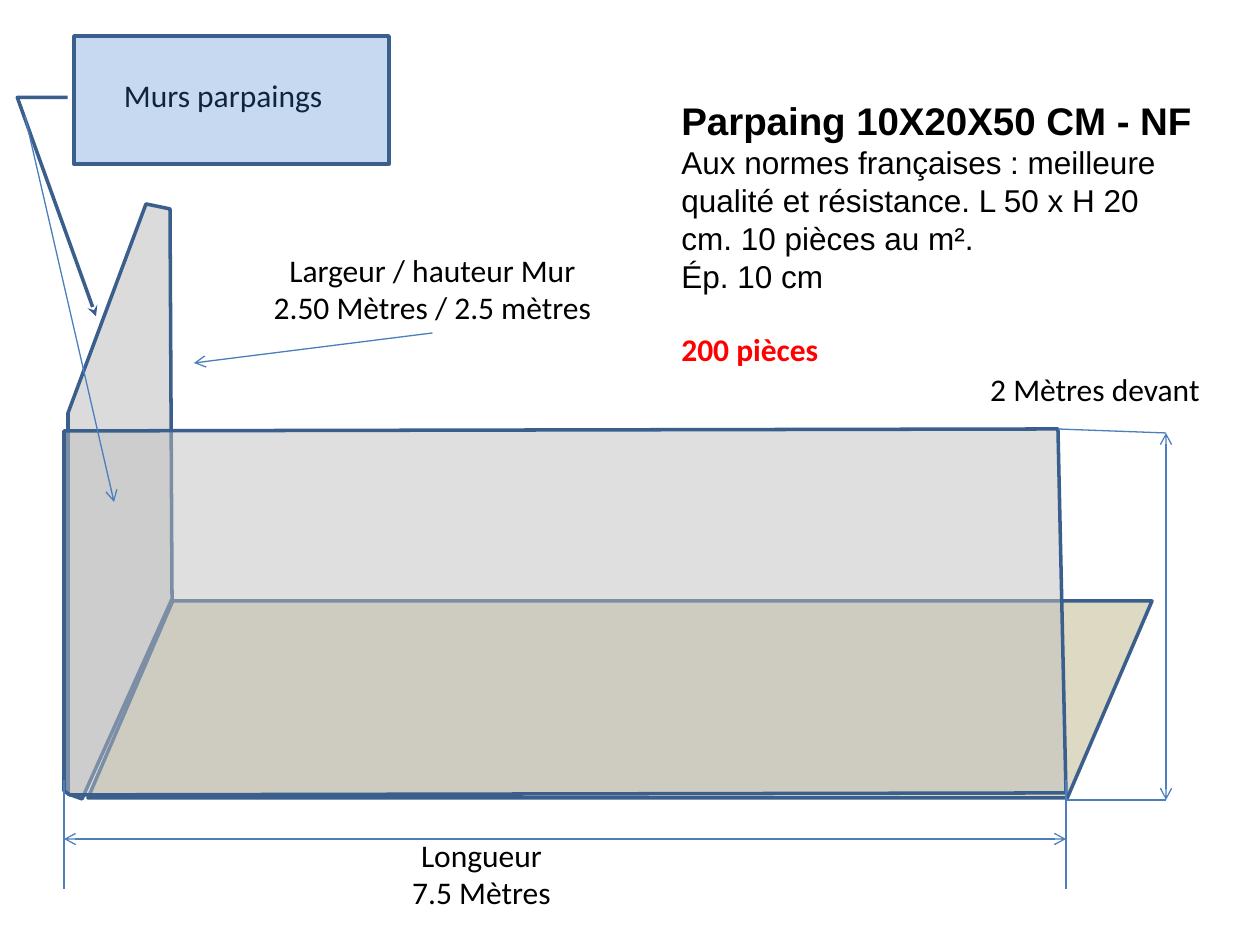
import dataclasses
from typing import Optional

import pptx
import pptx.dml.color
import pptx.enum.shapes
import pptx.enum.text
import pptx.oxml
import pptx.oxml.ns
import pptx.util

EMU_PER_PX = 914400 / 126
COLORS = {
    "outline": "3A5F8C",
    "dimension": "4B7EBC",
    "floor": "DDD9C3",
    "wall": "BFBFBF",
    "callout": "C6D9F1",
    "callout text": "0F243E",
    "text": "000000",
    "quantity": "FF0000",
}
ALIGN = pptx.enum.text.PP_ALIGN
ANCHOR = pptx.enum.text.MSO_ANCHOR
SHAPES = pptx.enum.shapes.MSO_SHAPE


@dataclasses.dataclass
class Wall:
    corners: list[tuple[int, int]]
    opacity: int


@dataclasses.dataclass
class Line:
    start: tuple[int, int]
    end: tuple[int, int]
    head: Optional[str] = None
    tail: Optional[str] = None


@dataclasses.dataclass
class Label:
    box: tuple[int, int, int, int]
    lines: list[str]
    color: str = "text"
    bold: bool = False
    align: ALIGN = ALIGN.CENTER
    anchor: ANCHOR = ANCHOR.MIDDLE


def px(length: int) -> pptx.util.Emu:
    return pptx.util.Emu(round(length * EMU_PER_PX))


def rgb(name: str) -> pptx.dml.color.RGBColor:
    return pptx.dml.color.RGBColor.from_string(COLORS[name])


def write(frame, text: str, *, size=18, font="Calibri", color="text",
          bold=False, align=ALIGN.CENTER) -> None:
    """Fill the first paragraph if it is free, otherwise add one."""
    first = frame.paragraphs[0]
    paragraph = frame.add_paragraph() if first.runs else first
    paragraph.alignment = align
    run = paragraph.add_run()
    run.text = text
    run.font.size = pptx.util.Pt(size)
    run.font.name = font
    run.font.bold = bold
    run.font.color.rgb = rgb(color)


def add_xml(parent, tag: str, **attributes: str) -> None:
    element = pptx.oxml.parse_xml(f"<a:{tag} {pptx.oxml.ns.nsdecls('a')}/>")
    for name, value in attributes.items():
        element.set(name, value)
    parent.append(element)


def paint(shape, fill: str, opacity: int = 100) -> None:
    shape.shadow.inherit = False
    shape.fill.solid()
    shape.fill.fore_color.rgb = rgb(fill)
    shape.line.color.rgb = rgb("outline")
    shape.line.width = pptx.util.Pt(2)
    if opacity < 100:
        solid_fill = shape._element.spPr.find(pptx.oxml.ns.qn("a:solidFill"))
        add_xml(solid_fill[0], "alpha", val=str(opacity * 1000))


def add_arrowheads(shape, head: Optional[str], tail: Optional[str]) -> None:
    outline = shape._element.spPr.find(pptx.oxml.ns.qn("a:ln"))
    for tag, kind in (("headEnd", head), ("tailEnd", tail)):
        if kind:
            add_xml(outline, tag, type=kind)


def draw_wall(shapes, wall: Wall) -> None:
    builder = shapes.build_freeform(*wall.corners[0], scale=EMU_PER_PX)
    builder.add_line_segments(wall.corners[1:], close=True)
    paint(builder.convert_to_shape(), "wall", wall.opacity)


def draw_line(shapes, line: Line):
    connector = shapes.add_connector(
        pptx.enum.shapes.MSO_CONNECTOR.STRAIGHT,
        *(px(value) for value in line.start + line.end))
    connector.line.color.rgb = rgb("dimension")
    connector.line.width = pptx.util.Pt(0.75)
    add_arrowheads(connector, line.head, line.tail)
    add_xml(connector._element.spPr, "effectLst")
    return connector


def add_text_box(shapes, box: tuple[int, int, int, int], *, wrap: bool, anchor: ANCHOR):
    text_box = shapes.add_textbox(*map(px, box))
    frame = text_box.text_frame
    frame.word_wrap = wrap
    frame.auto_size = pptx.enum.text.MSO_AUTO_SIZE.SHAPE_TO_FIT_TEXT
    frame.vertical_anchor = anchor
    return text_box


def draw_label(shapes, label: Label):
    text_box = add_text_box(shapes, label.box, wrap=False, anchor=label.anchor)
    for text in label.lines:
        write(text_box.text_frame, text, color=label.color, bold=label.bold, align=label.align)
    return text_box


SIDE_WALL = Wall([(68, 794), (68, 413), (146, 204), (170, 209), (172, 599), (82, 799)], 56)
FRONT_WALL = Wall([(70, 795), (1066, 793), (1058, 429), (64, 431), (64, 791)], 49)

LEFT, RIGHT, HEIGHT_X = 64, 1066, 1166
DIMENSIONS = [
    Line((25, 116), (114, 502), tail="arrow"),
    # Length
    Line((RIGHT, 839), (LEFT, 839), head="arrow", tail="arrow"),
    Line((LEFT, 889), (LEFT, 780)),
    Line((RIGHT, 889), (RIGHT, 780)),
    # Front height
    Line((1058, 429), (HEIGHT_X, 433)),
    Line((RIGHT, 800), (HEIGHT_X, 800)),
    Line((HEIGHT_X, 433), (HEIGHT_X, 800), head="arrow", tail="arrow"),
]
LABELS = [
    Label((394, 829, 175, 89), ["Longueur", "7.5 Mètres"]),
    Label((964, 363, 262, 51), ["2 Mètres devant"]),
    Label((669, 324, 186, 51), ["200 pièces"], color="quantity", bold=True,
          align=ALIGN.LEFT, anchor=ANCHOR.TOP),
]
WIDTH_LABEL = Label((243, 244, 379, 89), ["Largeur / hauteur Mur", "2.50 Mètres / 2.5 mètres"])


def main() -> None:
    presentation = pptx.Presentation()
    presentation.slide_width, presentation.slide_height = px(1260), px(945)
    shapes = presentation.slides.add_slide(presentation.slide_layouts[6]).shapes

    # Floor
    floor = shapes.add_shape(SHAPES.PARALLELOGRAM, *map(px, (88, 601, 1064, 197)))
    floor.adjustments[0] = 0.43
    paint(floor, "floor")

    # Callout pointing at the side wall
    callout = shapes.add_shape(SHAPES.LINE_CALLOUT_2, *map(px, (74, 36, 315, 128)))
    for index, value in enumerate((0.48, -0.02, 0.48, -0.18, 2.19, 0.07)):
        callout.adjustments[index] = value
    paint(callout, "callout")
    add_arrowheads(callout, None, "stealth")
    callout.text_frame.vertical_anchor = ANCHOR.MIDDLE
    callout.text_frame.margin_right = px(29)
    callout.text_frame.margin_bottom = px(16)
    write(callout.text_frame, "Murs parpaings", color="callout text")

    # Walls
    walls = shapes.add_group_shape()
    for wall in (SIDE_WALL, FRONT_WALL):
        draw_wall(walls.shapes, wall)

    # Dimensions and their labels
    for line in DIMENSIONS:
        draw_line(shapes, line)
    for label in LABELS:
        draw_label(shapes, label)
    width_label = draw_label(shapes, WIDTH_LABEL)
    width_arrow = draw_line(shapes, Line((432, 333), (194, 363), tail="arrow"))
    width_arrow.begin_connect(width_label, 2)

    # Block description
    description = add_text_box(shapes, (669, 90, 541, 212), wrap=True,
                               anchor=ANCHOR.MIDDLE).text_frame
    write(description, "Parpaing 10X20X50 CM - NF", size=22, font="Arial",
          bold=True, align=ALIGN.LEFT)
    for text in ("Aux normes françaises : meilleure qualité et résistance. "
                 "L 50 x H 20 cm. 10 pièces au m².", "Ép. 10 cm"):
        write(description, text, font="Arial", align=ALIGN.LEFT)

    presentation.save("out.pptx")


if __name__ == "__main__":
    main()
